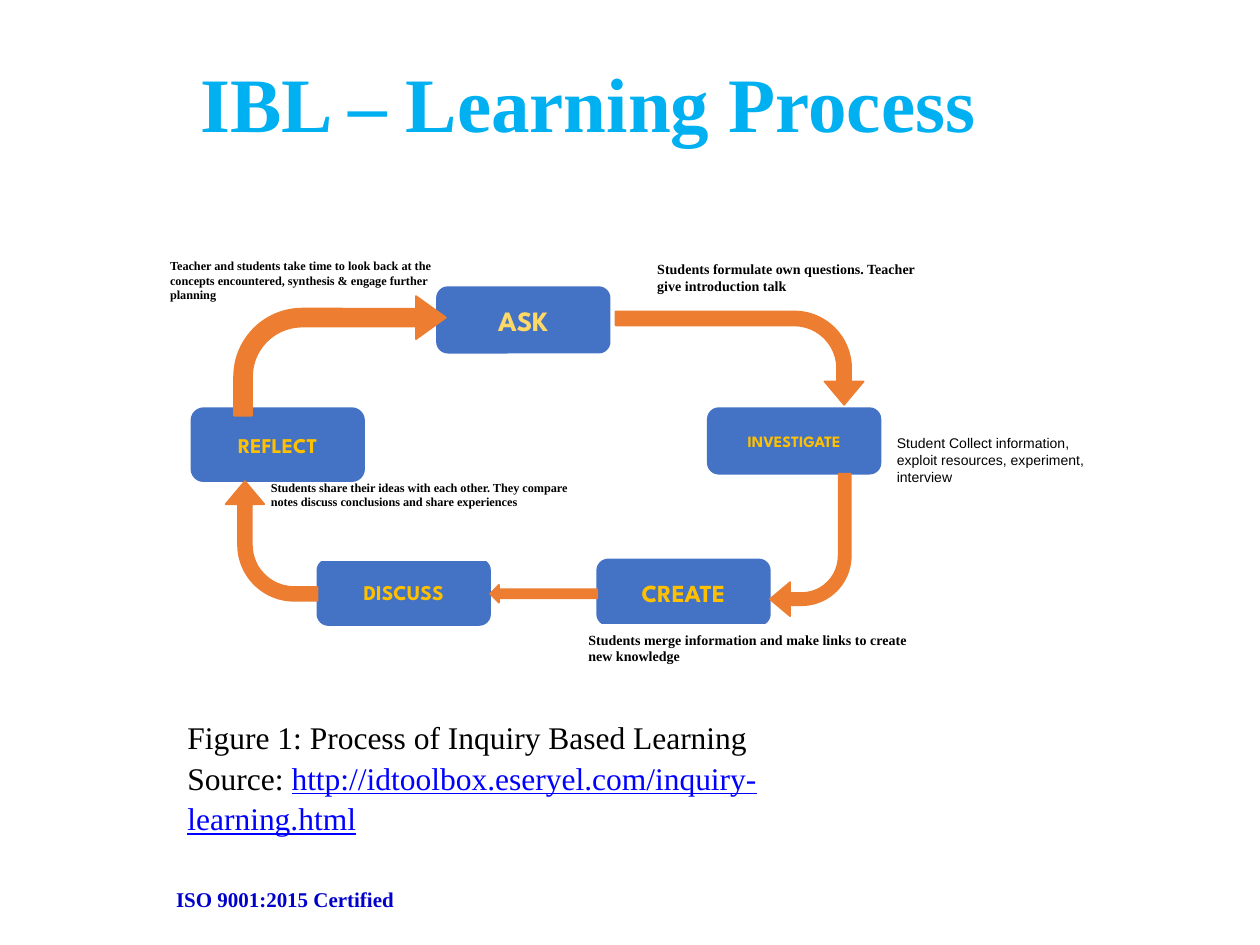
from dataclasses import dataclass

from pptx import Presentation
from pptx.dml.color import RGBColor
from pptx.enum.shapes import MSO_SHAPE
from pptx.enum.text import MSO_ANCHOR, PP_ALIGN
from pptx.util import Cm, Pt

WHITE = RGBColor(0xFF, 0xFF, 0xFF)
BLACK = RGBColor(0, 0, 0)
SKY = RGBColor(0x00, 0xB0, 0xF0)
NAVY = RGBColor(0x00, 0x00, 0xCC)
LINK = RGBColor(0x00, 0x00, 0xFF)
BLUE = RGBColor(0x44, 0x72, 0xC4)
GOLD = RGBColor(0xFF, 0xC0, 0x00)
PALE = RGBColor(0xFF, 0xD9, 0x66)
ORANGE = RGBColor(0xED, 0x7D, 0x31)
SERIF, SANS, LABEL = "Times New Roman", "Arial", "League Spartan"


@dataclass
class Box:
    """Place and size in centimetres."""
    left: float
    top: float
    width: float
    height: float

    def lengths(self) -> tuple:
        return Cm(self.left), Cm(self.top), Cm(self.width), Cm(self.height)


@dataclass
class Step:
    text: str
    left: float
    top: float
    size: int
    height: float = 1.32
    color: RGBColor = GOLD


@dataclass
class Note:
    text: str
    box: Box
    size: int


@dataclass
class Arrow:
    box: Box
    turn: int = 0
    kind: MSO_SHAPE = MSO_SHAPE.BENT_ARROW
    bend: tuple = (0.15, 0.21, 0.25, 0.61)


def add_run(para, text: str, size: int, color: RGBColor,
            font: str = SERIF, bold: bool = False):
    run = para.add_run()
    run.text = text
    run.font.name, run.font.size = font, Pt(size)
    run.font.bold, run.font.color.rgb = bold, color
    return run


def add_form(slide, kind, box: Box, color: RGBColor, line: float = 1):
    shape = slide.shapes.add_shape(kind, *box.lengths())
    shape.shadow.inherit = False
    shape.fill.solid()
    shape.fill.fore_color.rgb = color
    shape.line.color.rgb = color
    shape.line.width = Pt(line)
    return shape


def add_step(slide, step: Step) -> None:
    box = Box(step.left, step.top, 3.48, step.height)
    shape = add_form(slide, MSO_SHAPE.ROUNDED_RECTANGLE, box, BLUE)
    frame = shape.text_frame
    frame.vertical_anchor = MSO_ANCHOR.MIDDLE
    para = frame.paragraphs[0]
    para.alignment = PP_ALIGN.CENTER
    add_run(para, step.text, step.size, step.color, LABEL, True)


def add_note(slide, note: Note) -> None:
    shape = add_form(slide, MSO_SHAPE.RECTANGLE, note.box, WHITE, 0.75)
    frame = shape.text_frame
    frame.vertical_anchor = MSO_ANCHOR.TOP
    para = frame.paragraphs[0]
    para.alignment = PP_ALIGN.LEFT
    add_run(para, note.text, note.size, BLACK, bold=True)


def add_arrow(slide, arrow: Arrow) -> None:
    shape = add_form(slide, arrow.kind, arrow.box, ORANGE)
    shape.rotation = arrow.turn
    for i, value in enumerate(arrow.bend):
        shape.adjustments[i] = value


def add_frame(slide, box: Box):
    frame = slide.shapes.add_textbox(*box.lengths()).text_frame
    frame.word_wrap = True
    return frame


DISCUSS = Step("DISCUSS", 6.4, 11.28, 12)
STEPS = [
    Step("ASK", 8.81, 5.79, 16, color=PALE),
    Step("REFLECT", 3.86, 8.23, 12, height=1.47),
    Step("INVESTIGATE", 14.27, 8.23, 9),
    Step("CREATE", 12.04, 11.28, 14),
]
NOTES = [
    Note("Students share their ideas with each other. They compare notes "
         "discuss conclusions and share experiences",
         Box(5.21, 9.55, 6.63, 1.75), 7),
    Note("Students formulate own questions. Teacher give introduction talk",
         Box(13, 5.13, 6.15, 1.78), 8),
    Note("Teacher and students take time to look back at the concepts "
         "encountered, synthesis & engage further planning",
         Box(3.18, 5.08, 5.89, 1.6), 7),
]
MERGE = Note("Students merge information and make links to create new knowledge",
             Box(11.61, 12.6, 7.24, 2.01), 8)
ARROWS = [
    Arrow(Box(13.97, 4.72, 1.88, 5), 90),
    Arrow(Box(4.72, 5.97, 4.27, 2.41), bend=(0.15, 0.18, 0.25, 0.57)),
    Arrow(Box(4.27, 9.98, 2.41, 1.85), 270),
    Arrow(Box(15.52, 9.55, 1.63, 2.87), 180),
    Arrow(Box(9.88, 11.79, 2.16, 0.36), kind=MSO_SHAPE.LEFT_ARROW,
          bend=(0.5, 0.5)),
]


def main() -> None:
    deck = Presentation()
    deck.slide_width, deck.slide_height = Cm(25.4), Cm(19.05)
    slide = deck.slides.add_slide(deck.slide_layouts[5])

    # Title
    title = slide.shapes.title
    title.left, title.top, title.width, title.height = Box(
        0.43, 0.46, 22.86, 3.18).lengths()
    title.text_frame.vertical_anchor = MSO_ANCHOR.MIDDLE
    para = title.text_frame.paragraphs[0]
    para.alignment = PP_ALIGN.CENTER
    add_run(para, "IBL – Learning Process", 44, SKY, bold=True)

    # Footer
    frame = add_frame(slide, Box(3.3, 17.75, 13.18, 0.76))
    add_run(frame.paragraphs[0], "ISO 9001:2015 Certified", 12, NAVY, bold=True)

    # Cycle, from back to front
    add_step(slide, DISCUSS)
    for note in NOTES:
        add_note(slide, note)
    for step in STEPS:
        add_step(slide, step)
    for arrow in ARROWS:
        add_arrow(slide, arrow)
    add_note(slide, MERGE)

    # Remark beside the investigate step
    frame = add_frame(slide, Box(17.83, 8.51, 4.83, 2.08))
    frame.margin_top = frame.margin_bottom = Cm(0.25)
    add_run(frame.paragraphs[0], "Student Collect information, exploit "
            "resources, experiment, interview", 8, BLACK, SANS)

    # Caption and source
    frame = add_frame(slide, Box(3.53, 14.3, 12.7, 2.67))
    name, source = frame.paragraphs[0], frame.add_paragraph()
    name.line_spacing = source.line_spacing = 1.07
    add_run(name, "Figure 1: Process of Inquiry Based Learning", 18, BLACK)
    add_run(source, "Source: ", 18, BLACK)
    link = add_run(source, "http://idtoolbox.eseryel.com/inquiry-learning.html",
                   18, LINK)
    link.font.underline = True

    deck.save("out.pptx")


if __name__ == "__main__":
    main()
